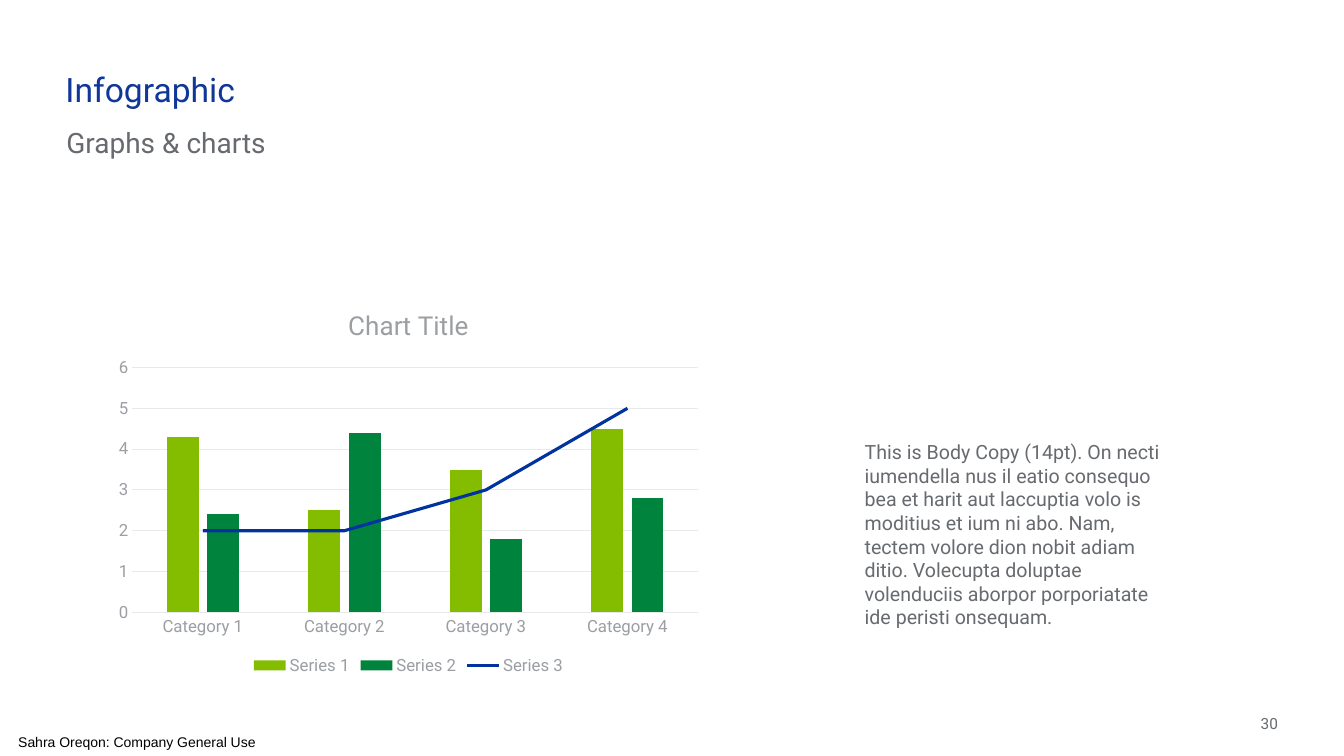
import lxml.etree
import pptx
import pptx.chart.data
import pptx.dml.color
import pptx.enum.chart
import pptx.enum.text
import pptx.oxml.ns
import pptx.util
from dataclasses import dataclass

Cm, Pt = pptx.util.Cm, pptx.util.Pt
qn = pptx.oxml.ns.qn
ALIGN = pptx.enum.text.PP_ALIGN
ANCHOR = pptx.enum.text.MSO_ANCHOR

TITLE = "Infographic"
SUB = "Graphs & charts"
BODY = (
    "This is Body Copy (14pt). On necti iumendella nus il eatio consequo "
    "bea et harit aut laccuptia volo is moditius et ium ni abo. Nam, tectem "
    "volore dion nobit adiam ditio. Volecupta doluptae volenduciis aborpor "
    "porporiatate ide peristi onsequam."
)
NUMBER = "30"
FOOTER = "Sahra Oreqon: Company General Use"
HEAD = "Chart Title"
CATS = ["Category 1", "Category 2", "Category 3", "Category 4"]
BARS = {"Series 1": (4.3, 2.5, 3.5, 4.5), "Series 2": (2.4, 4.4, 1.8, 2.8)}
TREND = {"Series 3": (2, 2, 3, 5)}


@dataclass(frozen=True)
class Theme:
    font: str = "Roboto"
    plain: str = "Arial"
    blue: str = "0F3699"
    gray: str = "676A6E"
    pale: str = "9B9EA2"
    grid: str = "E8E9E9"
    black: str = "000000"
    bars: tuple = ("84BD00", "00843D")
    trend: str = "0033A0"
    title: float = 24
    sub: float = 20
    body: float = 14
    page: float = 11
    foot: float = 10
    head: float = 18.6
    label: float = 12


THEME = Theme()
PLACES = {
    "title": (1.65, 1.55, 12.57, 1.45),
    "sub": (1.42, 3.02, 12.57, 1.45),
    "body": (21.54, 10.59, 8.03, 8.28),
    "chart": (2.69, 7.32, 15.21, 9.8),
    "page": (31.22, 17.91, 0.99, 0.64),
    "foot": (0, 18.36, 6.91, 0.69),
}


def place(name):
    return [Cm(length) for length in PLACES[name]]


def tint(hue):
    return pptx.dml.color.RGBColor.from_string(hue)


def style(font, size, hue, face=THEME.font):
    font.name, font.size, font.bold = face, Pt(size), False
    font.color.rgb = tint(hue)


def write(shape, text, size, hue, face=THEME.font, side=0, top=0,
          anchor=ANCHOR.TOP, align=ALIGN.LEFT, pitch=None):
    """Fill a shape with one unbulleted paragraph; pitch is the line height."""
    frame = shape.text_frame
    frame.word_wrap = True
    frame.auto_size = pptx.enum.text.MSO_AUTO_SIZE.NONE
    frame.vertical_anchor = anchor
    frame.margin_left = frame.margin_right = Cm(side)
    frame.margin_top, frame.margin_bottom = Cm(top), Cm(0)
    para = frame.paragraphs[0]
    para.alignment = align
    para.space_before = Pt(0)
    if pitch:
        para.line_spacing = Pt(pitch)
    props = para._p.get_or_add_pPr()
    props.set("marL", "0")
    props.set("indent", "0")
    lxml.etree.SubElement(props, qn("a:buNone"))
    run = para.add_run()
    run.text = text
    style(run.font, size, hue, face)


def split(chart):
    """Move the last column series into a line plot on the same axes."""
    bars = chart.plots[0]._element
    row = bars.findall(qn("c:ser"))[-1]
    for flag in row.findall(qn("c:invertIfNegative")):
        row.remove(flag)
    line = bars.makeelement(qn("c:lineChart"))
    bars.addnext(line)
    for tag, val in (("c:grouping", "standard"), ("c:varyColors", "0")):
        lxml.etree.SubElement(line, qn(tag)).set("val", val)
    line.append(row)
    lxml.etree.SubElement(line, qn("c:marker")).set("val", "1")
    for axis in bars.findall(qn("c:axId")):
        lxml.etree.SubElement(line, qn("c:axId")).set("val", axis.get("val"))


def draw(slide):
    kinds = pptx.enum.chart
    data = pptx.chart.data.CategoryChartData()
    data.categories = CATS
    for name, vals in (BARS | TREND).items():
        data.add_series(name, vals)
    chart = slide.shapes.add_chart(
        kinds.XL_CHART_TYPE.COLUMN_CLUSTERED, *place("chart"), data).chart
    style(chart.font, THEME.foot, THEME.gray)

    chart.has_title = True
    run = chart.chart_title.text_frame.paragraphs[0].add_run()
    run.text = HEAD
    style(run.font, THEME.head, THEME.pale)

    chart.has_legend = True
    chart.legend.position = kinds.XL_LEGEND_POSITION.BOTTOM
    chart.legend.include_in_layout = False
    style(chart.legend.font, THEME.label, THEME.pale)

    cat, val = chart.category_axis, chart.value_axis
    for axis in (cat, val):
        axis.major_tick_mark = axis.minor_tick_mark = kinds.XL_TICK_MARK.NONE
        style(axis.tick_labels.font, THEME.label, THEME.pale)
    val.minimum_scale, val.maximum_scale, val.major_unit = 0, 6, 1
    val.has_major_gridlines = True
    val.format.line.fill.background()
    for rule in (cat.format.line, val.major_gridlines.format.line):
        rule.color.rgb, rule.width = tint(THEME.grid), Pt(0.75)

    split(chart)
    bars, line = chart.plots
    bars.gap_width, bars.overlap = 219, -27
    bars.vary_by_categories = False
    for row, hue in zip(bars.series, THEME.bars):
        row.format.fill.solid()
        row.format.fill.fore_color.rgb = tint(hue)
    trend = line.series[0]
    trend.smooth = False
    trend.marker.style = kinds.XL_MARKER_STYLE.NONE
    trend.format.line.color.rgb = tint(THEME.trend)
    trend.format.line.width = Pt(2.25)


def main():
    deck = pptx.Presentation()
    deck.slide_width, deck.slide_height = Cm(33.87), Cm(19.05)
    slide = deck.slides.add_slide(deck.slide_layouts.get_by_name("Two Content"))
    title, sub, body = slide.placeholders
    for shape, name in ((title, "title"), (sub, "sub"), (body, "body")):
        shape.left, shape.top, shape.width, shape.height = place(name)
    write(title, TITLE, THEME.title, THEME.blue, top=0.21, pitch=28)
    write(sub, SUB, THEME.sub, THEME.gray, side=0.25, top=0.13, pitch=24)
    write(body, BODY, THEME.body, THEME.gray, side=0.25, top=0.5, pitch=16.85)
    draw(slide)
    page = slide.shapes.add_textbox(*place("page"))
    write(page, NUMBER, THEME.page, THEME.gray,
          anchor=ANCHOR.MIDDLE, align=ALIGN.RIGHT)
    foot = slide.shapes.add_textbox(*place("foot"))
    write(foot, FOOTER, THEME.foot, THEME.black, THEME.plain, side=0.46,
          anchor=ANCHOR.MIDDLE)
    foot.text_frame.word_wrap = False
    deck.save("out.pptx")


if __name__ == "__main__":
    main()
